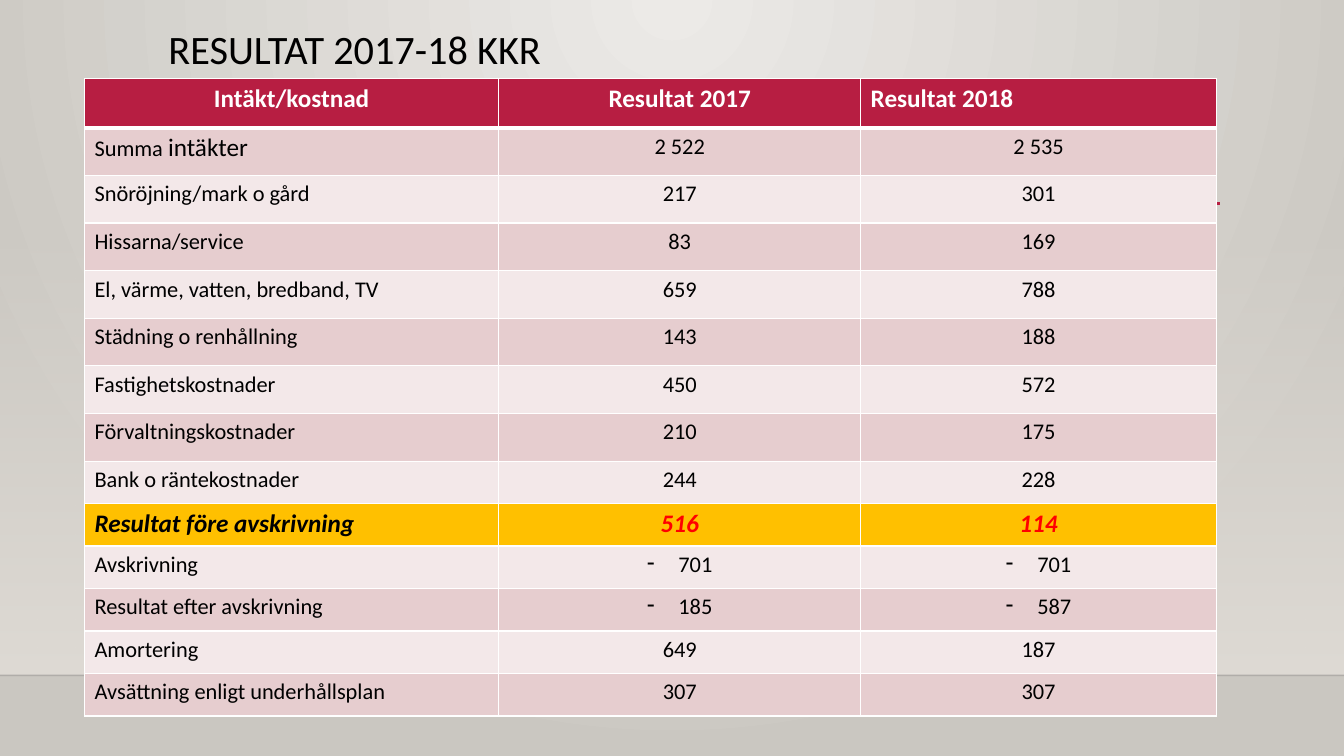
from lxml.etree import SubElement
from pptx import Presentation
from pptx.dml.color import RGBColor
from pptx.enum.shapes import MSO_CONNECTOR, MSO_SHAPE
from pptx.enum.text import MSO_ANCHOR, MSO_AUTO_SIZE, PP_ALIGN
from pptx.oxml import parse_xml
from pptx.oxml.ns import nsdecls, qn
from pptx.util import Cm, Pt

COLORS = {
    "light": "ECEAE7", "edge": "CAC7C1", "haze": "DFDBD5", "horizon": "000001",
    "accent": "B71E42", "white": "FFFFFF", "black": "000000", "red": "FF0000",
    "dark_band": "E6CDCF", "light_band": "F3E8E9", "gold": "FFC000",
}
FONT = "Calibri"
WIDTH, HEIGHT = Cm(33.87), Cm(19.05)
COLUMN_WIDTHS = [Cm(10.44), Cm(9.12), Cm(8.97)]
ROW_HEIGHTS = [Cm(1.24)] + [Cm(1.2)] * 7 + [Cm(1.07)] * 6
HEADER = ["Intäkt/kostnad", "Resultat 2017", "Resultat 2018"]
TOTAL = "Resultat före avskrivning"
RESULTS = [
    ["Summa intäkter", "2 522", "2 535"],
    ["Snöröjning/mark o gård", "217", "301"],
    ["Hissarna/service", "83", "169"],
    ["El, värme, vatten, bredband, TV", "659", "788"],
    ["Städning o renhållning", "143", "188"],
    ["Fastighetskostnader", "450", "572"],
    ["Förvaltningskostnader", "210", "175"],
    ["Bank o räntekostnader", "244", "228"],
    [TOTAL, "516", "114"],
    ["Avskrivning", "-701", "-701"],
    ["Resultat efter avskrivning", "-185", "-587"],
    ["Amortering", "649", "187"],
    ["Avsättning enligt underhållsplan", "307", "307"],
]
BODY = {"name": FONT, "size": Pt(16), "bold": False, "italic": False}
STRONG = {**BODY, "size": Pt(18), "bold": True}
TOTAL_STYLE = {**STRONG, "italic": True}
TITLE_STYLE = {**BODY, "size": Pt(28.8)}


def rgb(color):
    return RGBColor.from_string(COLORS[color])


def set_attributes(target, values):
    for name, value in values.items():
        setattr(target, name, value)


def add_run(paragraph, text, style, color):
    run = paragraph.add_run()
    run.text = text
    set_attributes(run.font, style)
    run.font.color.rgb = rgb(color)


def set_opacity(color_element, percent):
    SubElement(color_element, qn("a:alpha"), val=str(percent * 1000))


def set_gradient(fill, start, end):
    fill.gradient()
    for stop, (position, color) in zip(fill.gradient_stops, [(0, start), (1, end)]):
        stop.position = position
        stop.color.rgb = rgb(color)


def add_line(slide, left, top, width, color, weight):
    line = slide.shapes.add_connector(MSO_CONNECTOR.STRAIGHT, left, top, left + width, top)
    line.line.color.rgb = rgb(color)
    line.line.width = Pt(weight)
    SubElement(line.element.spPr, qn("a:effectLst"))
    return line


def build_background(slide, left, top, width, height):
    fill = slide.background.fill
    set_gradient(fill, "light", "edge")
    gradient = slide.element.find(".//" + qn("a:gradFill"))
    gradient.remove(gradient.find(qn("a:lin")))
    gradient.append(parse_xml(
        f'<a:path {nsdecls("a")} path="circle">'
        '<a:fillToRect l="43000" t="0" r="43000" b="100000"/></a:path>'))

    haze = slide.shapes.add_shape(
        MSO_SHAPE.RECTANGLE, left, top + Cm(5.61), width, Cm(11.41))
    haze.shadow.inherit = False
    haze.line.fill.background()
    set_gradient(haze.fill, "haze", "haze")
    haze.fill.gradient_angle = 270
    set_opacity(haze.element.spPr.find(".//" + qn("a:srgbClr")), 0)

    horizon = add_line(slide, left, top + Cm(17.02), width, "horizon", 1)
    set_opacity(horizon.element.spPr.find(".//" + qn("a:srgbClr")), 20)
    add_line(slide, left + Cm(4.04), top + Cm(5.13), Cm(26.7), "accent", 2.5)


def build_title(slide, left, top, width, height):
    title = slide.shapes.title
    set_attributes(title, {"left": left, "top": top, "width": width, "height": height})
    set_attributes(title.text_frame, {
        "word_wrap": True, "auto_size": MSO_AUTO_SIZE.NONE,
        "vertical_anchor": MSO_ANCHOR.MIDDLE})
    paragraph = title.text_frame.paragraphs[0]
    set_attributes(paragraph, {"alignment": PP_ALIGN.LEFT, "line_spacing": 0.9})
    add_run(paragraph, "RESULTAT 2017-18 KKR", TITLE_STYLE, "black")


def set_borders(cell, weights):
    properties = cell._tc.get_or_add_tcPr()
    for position, (side, weight) in enumerate(weights.items()):
        properties.insert(position, parse_xml(
            f'<a:ln{side} {nsdecls("a")} w="{Pt(weight)}"><a:solidFill>'
            f'<a:srgbClr val="{COLORS["white"]}"/></a:solidFill></a:ln{side}>'))


def add_dash_bullet(paragraph):
    properties = paragraph._p.get_or_add_pPr()
    properties.set("marL", str(Cm(0.79)))
    properties.set("indent", str(-Cm(0.79)))
    SubElement(properties, qn("a:buChar"), char="-")


def fill_cell(cell, text, row, column):
    is_header, is_total = row == 0, RESULTS[row - 1][0] == TOTAL and row > 0
    paragraph = cell.text_frame.paragraphs[0]
    centered = column != 2 if is_header else column > 0
    paragraph.alignment = PP_ALIGN.CENTER if centered else PP_ALIGN.LEFT
    if text.startswith("-"):
        add_dash_bullet(paragraph)
        text = text[1:]
    if is_header:
        fill, style, color = "accent", STRONG, "white"
    elif is_total:
        fill, style, color = "gold", TOTAL_STYLE, "red" if column else "black"
    else:
        fill, style, color = "dark_band" if row % 2 else "light_band", BODY, "black"
    if text == "Summa intäkter":
        add_run(paragraph, "Summa ", style, color)
        add_run(paragraph, "intäkter", {**style, "size": Pt(18)}, color)
    else:
        add_run(paragraph, text, style, color)
    cell.fill.solid()
    cell.fill.fore_color.rgb = rgb(fill)
    set_borders(cell, {"L": 1, "R": 1, "T": 3 if row == 1 else 1, "B": 3 if is_header else 1})


def build_table(slide, left, top, width, height):
    rows = [HEADER] + RESULTS
    table = slide.shapes.add_table(len(rows), len(HEADER), left, top, width, height).table
    for column, column_width in zip(table.columns, COLUMN_WIDTHS):
        column.width = column_width
    for row, row_height in zip(table.rows, ROW_HEIGHTS):
        row.height = row_height
    for row, texts in enumerate(rows):
        for column, text in enumerate(texts):
            fill_cell(table.cell(row, column), text, row, column)


def main():
    presentation = Presentation()
    set_attributes(presentation, {"slide_width": WIDTH, "slide_height": HEIGHT})
    slide = presentation.slides.add_slide(presentation.slide_layouts[5])
    build_background(slide, 0, 0, WIDTH, HEIGHT)
    build_title(slide, Cm(3.99), Cm(0.61), Cm(26.67), Cm(1.37))
    build_table(slide, Cm(2.13), Cm(1.98), sum(COLUMN_WIDTHS), sum(ROW_HEIGHTS))
    presentation.save("out.pptx")


if __name__ == "__main__":
    main()
